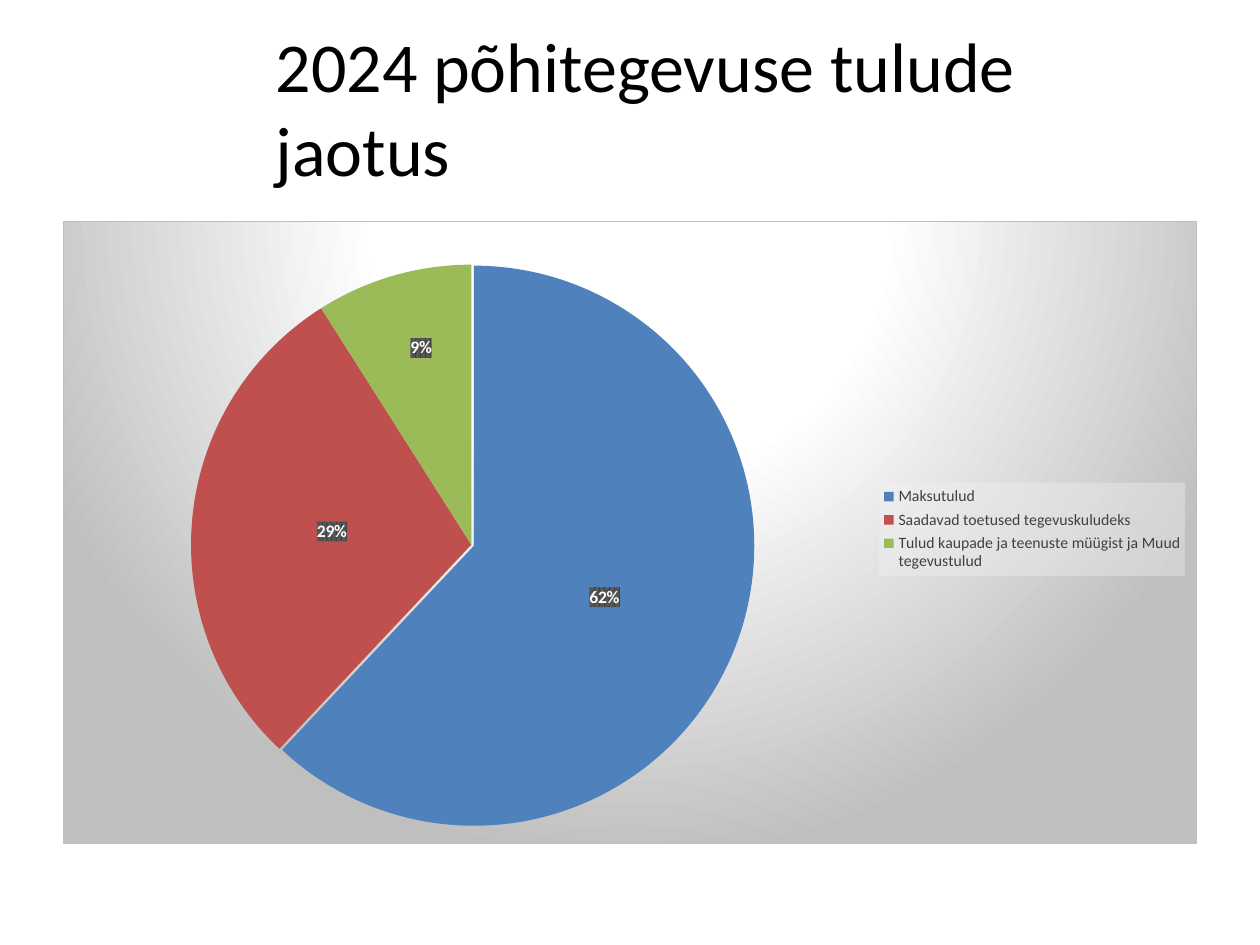
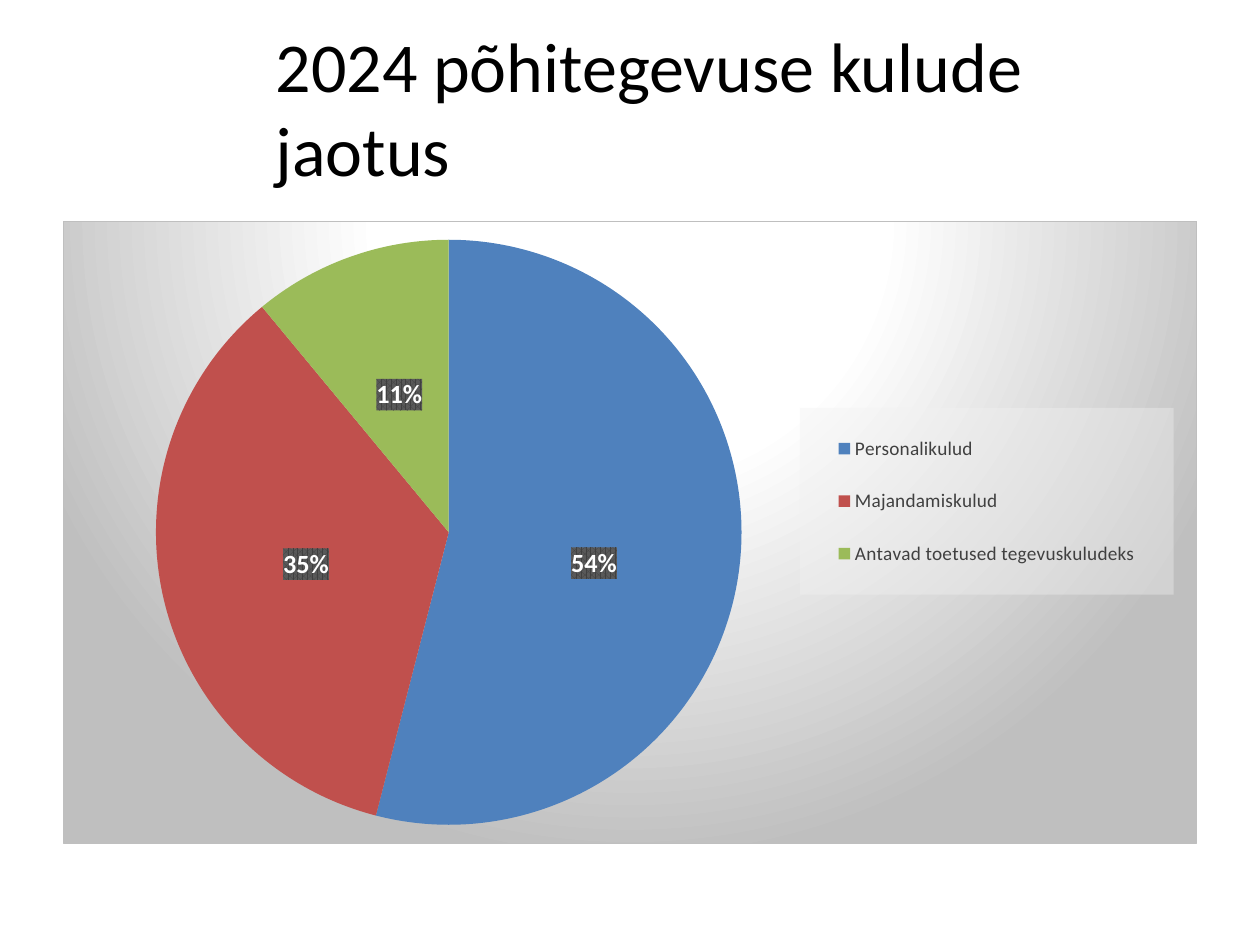
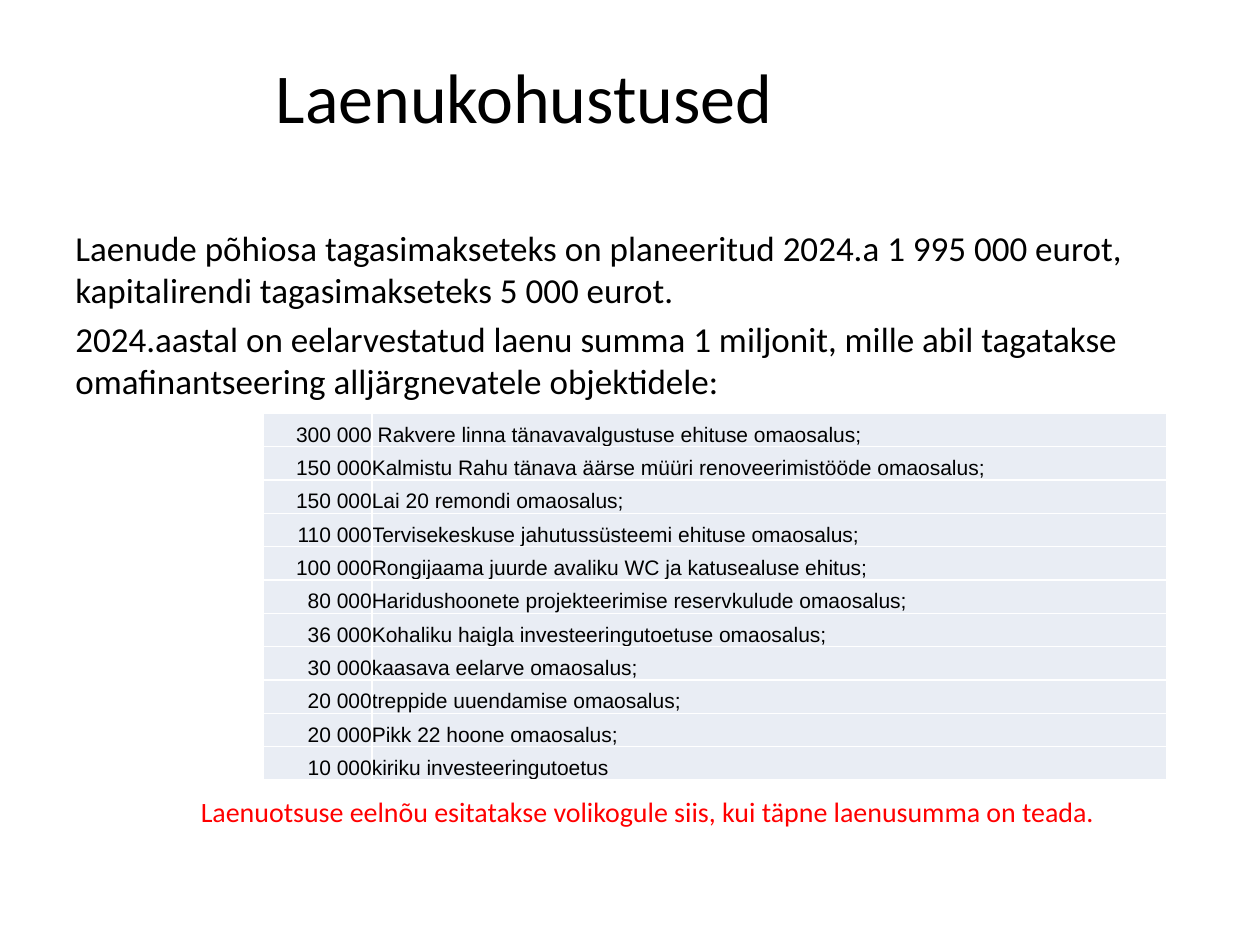
"""Builds the 2024 budget slides: two revenue and cost pies and the loan commitments."""
from copy import deepcopy

from pptx import Presentation
from pptx.chart.data import CategoryChartData
from pptx.dml.color import RGBColor
from pptx.enum.chart import XL_CHART_TYPE, XL_LABEL_POSITION, XL_LEGEND_POSITION
from pptx.enum.text import MSO_ANCHOR, PP_ALIGN
from pptx.oxml import parse_xml
from pptx.oxml.ns import nsdecls, qn
from pptx.util import Pt

COLORS = {
    "text": "000000", "note": "FF0000", "white": "FFFFFF", "gray": "BFBFBF",
    "legend": "404040", "legend_fill": "F2F2F2", "label_dark": "404040",
    "label_light": "595959", "cell": "E9EDF4",
}
SLICES = ["4F81BD", "C0504D", "9BBB59"]
FONT = "Calibri"
TITLE_LEFT, TITLE_WIDTH = 150.5, 533.5
CONTENT = (36, 126, 648)
CHART_HEIGHT = 356.4

PIES = [
    {
        "title": "2024 põhitegevuse tulude jaotus",
        "values": {
            "Maksutulud": 62,
            "Saadavad toetused tegevuskuludeks": 29,
            "Tulud kaupade ja teenuste müügist ja Muud tegevustulud": 9,
        },
        "plot": (0.11, 0.07, 0.5, 0.9), "legend": (0.72, 0.42, 0.27, 0.15),
        "legend_size": 9, "label_size": 10,
        "exploded": 0, "moved": (2, -0.01, -0.1),
    },
    {
        "title": "2024 põhitegevuse kulude jaotus",
        "values": {
            "Personalikulud": 54,
            "Majandamiskulud": 35,
            "Antavad toetused tegevuskuludeks": 11,
        },
        "plot": (0.08, 0.03, 0.52, 0.94), "legend": (0.65, 0.3, 0.33, 0.3),
        "legend_size": 11, "label_size": 15,
        "exploded": None, "moved": (0, 0, 0.02),
    },
]

LOAN_TITLE = "Laenukohustused"
LOAN_TEXT = [
    "Laenude põhiosa tagasimakseteks on planeeritud 2024.a 1 995 000 eurot, "
    "kapitalirendi tagasimakseteks 5 000 eurot.",
    "2024.aastal on eelarvestatud laenu summa 1 miljonit, mille abil tagatakse "
    "omafinantseering alljärgnevatele objektidele:",
]
LOAN_NOTE = "Laenuotsuse eelnõu esitatakse volikogule siis, kui täpne laenusumma on teada."
LOANS = [
    ("300 000", " Rakvere linna tänavavalgustuse ehituse omaosalus;"),
    ("150 000", "Kalmistu Rahu tänava äärse müüri renoveerimistööde omaosalus;"),
    ("150 000", "Lai 20 remondi omaosalus;"),
    ("110 000", "Tervisekeskuse jahutussüsteemi ehituse omaosalus;"),
    ("100 000", "Rongijaama juurde avaliku WC ja katusealuse ehitus;"),
    ("80 000", "Haridushoonete projekteerimise reservkulude omaosalus;"),
    ("36 000", "Kohaliku haigla investeeringutoetuse omaosalus;"),
    ("30 000", "kaasava eelarve omaosalus;"),
    ("20 000", "treppide uuendamise omaosalus;"),
    ("20 000", "Pikk 22 hoone omaosalus;"),
    ("10 000", "kiriku investeeringutoetus"),
]
LOAN_COLUMNS = [(62, PP_ALIGN.RIGHT), (454, PP_ALIGN.JUSTIFY)]
ROW_HEIGHT = 19.05


def style_font(font, size, color="text", bold=False, name=FONT):
    font.name, font.size, font.bold = name, Pt(size), bold
    font.color.rgb = RGBColor.from_string(COLORS[color])


def add_text(page, place, lines, size, color="text", anchor=MSO_ANCHOR.TOP, gap=0):
    frame = page.shapes.add_textbox(*map(Pt, place)).text_frame
    frame.word_wrap, frame.vertical_anchor = True, anchor
    for index, line in enumerate(lines):
        para = frame.add_paragraph() if index else frame.paragraphs[0]
        if index:
            para.space_before = Pt(gap)
        span = para.add_run()
        span.text = line
        style_font(span.font, size, color)


def add_page(deck, title, top=21.6, height=78.5):
    page = deck.slides.add_slide(deck.slide_layouts[6])
    add_text(page, (TITLE_LEFT, top, TITLE_WIDTH, height), [title], 40,
             anchor=MSO_ANCHOR.MIDDLE)
    return page


def solid(color, alpha=100):
    return (f'<a:solidFill><a:srgbClr val="{COLORS[color]}">'
            f'<a:alpha val="{alpha * 1000}"/></a:srgbClr></a:solidFill>')


def set_look(element, content):
    look = parse_xml(f'<c:spPr {nsdecls("c", "a")}>{content}</c:spPr>')
    element.find(qn("c:txPr")).addprevious(look)


def set_layout(element, index, place, inner=False):
    for old in element.findall(qn("c:layout")):
        element.remove(old)
    target = '<c:layoutTarget val="inner"/>' if inner else ""
    modes = '<c:xMode val="edge"/><c:yMode val="edge"/>' if len(place) == 4 else ""
    numbers = "".join(f'<c:{key} val="{value}"/>' for key, value in zip("xywh", place))
    element.insert(index, parse_xml(
        f'<c:layout {nsdecls("c")}><c:manualLayout>{target}{modes}{numbers}'
        "</c:manualLayout></c:layout>"))


def paint_backdrop(chart):
    stops = "".join(
        f'<a:gs pos="{position * 1000}"><a:srgbClr val="{COLORS[color]}"/></a:gs>'
        for position, color in [(0, "white"), (39, "white"), (100, "gray")])
    set_look(chart.element, (
        f'<a:gradFill><a:gsLst>{stops}</a:gsLst><a:path path="circle">'
        '<a:fillToRect l="50000" t="-80000" r="50000" b="180000"/></a:path></a:gradFill>'
        f'<a:ln w="9525">{solid("gray")}</a:ln>'))


def add_labels(series, size, moved):
    labels = series.data_labels
    labels.show_percentage, labels.show_value = True, False
    labels.number_format, labels.number_format_is_linked = "0%", False
    labels.position = XL_LABEL_POSITION.CENTER
    style_font(labels.font, size, "white", True)
    element = labels.element if hasattr(labels, "element") else labels._element
    set_look(element, (
        '<a:pattFill prst="pct75">'
        f'<a:fgClr><a:srgbClr val="{COLORS["label_dark"]}"/></a:fgClr>'
        f'<a:bgClr><a:srgbClr val="{COLORS["label_light"]}"/></a:bgClr></a:pattFill>'))
    index, *shift = moved
    label = parse_xml(f'<c:dLbl {nsdecls("c")}><c:idx val="{index}"/></c:dLbl>')
    for part in element:
        if part.tag != qn("c:showLeaderLines"):
            label.append(deepcopy(part))
    set_layout(label, 1, shift)
    element.insert(0, label)


def add_pie(page, pie):
    data = CategoryChartData()
    data.categories = list(pie["values"])
    data.add_series("Series 1", list(pie["values"].values()))
    chart = page.shapes.add_chart(
        XL_CHART_TYPE.PIE, *map(Pt, (*CONTENT, CHART_HEIGHT)), data).chart
    style_font(chart.font, 10)
    chart.has_title = False
    paint_backdrop(chart)
    set_layout(chart.element.chart.plotArea, 0, pie["plot"], inner=True)

    chart.has_legend = True
    legend = chart.legend
    legend.position, legend.include_in_layout = XL_LEGEND_POSITION.RIGHT, False
    style_font(legend.font, pie["legend_size"], "legend")
    set_look(legend._element, solid("legend_fill", 39))
    set_layout(legend._element, 1, pie["legend"])

    plot = chart.plots[0]
    plot.vary_by_categories = True
    series = plot.series[0]
    for index, color in enumerate(SLICES):
        look = series.points[index].format
        look.fill.solid()
        look.fill.fore_color.rgb = RGBColor.from_string(color)
        look.line.fill.background()
        if index == pie["exploded"]:
            series._element.findall(qn("c:dPt"))[-1].find(qn("c:spPr")).addprevious(
                parse_xml(f'<c:explosion {nsdecls("c")} val="1"/>'))
    add_labels(series, pie["label_size"], pie["moved"])


def fill_cell(cell, text, align):
    cell.margin_left = cell.margin_right = cell.margin_top = cell.margin_bottom = 0
    cell.vertical_anchor = MSO_ANCHOR.BOTTOM
    cell.fill.solid()
    cell.fill.fore_color.rgb = RGBColor.from_string(COLORS["cell"])
    for index, side in enumerate("LRTB"):
        cell._tc.tcPr.insert(index, parse_xml(
            f'<a:ln{side} {nsdecls("a")} w="12700">{solid("white")}</a:ln{side}>'))
    para = cell.text_frame.paragraphs[0]
    para.alignment = align
    span = para.add_run()
    span.text = text
    style_font(span.font, 12, name="Arial")


def add_loans(page):
    width = sum(size for size, _ in LOAN_COLUMNS)
    table = page.shapes.add_table(
        len(LOANS), len(LOAN_COLUMNS),
        *map(Pt, (TITLE_LEFT, 236.2, width, ROW_HEIGHT * len(LOANS)))).table
    table.first_row = table.horz_banding = False
    for column, (size, _) in zip(table.columns, LOAN_COLUMNS):
        column.width = Pt(size)
    for row, loan in zip(table.rows, LOANS):
        row.height = Pt(ROW_HEIGHT)
        for cell, text, (_, align) in zip(row.cells, loan, LOAN_COLUMNS):
            fill_cell(cell, text, align)


def main():
    deck = Presentation()
    deck.slide_width, deck.slide_height = Pt(720), Pt(540)
    for pie in PIES:
        add_pie(add_page(deck, pie["title"]), pie)
    page = add_page(deck, LOAN_TITLE, 20.9, 67.7)
    add_text(page, (*CONTENT, 108), LOAN_TEXT, 20, gap=4)
    add_loans(page)
    add_text(page, (107.7, 450.6, 560, 27), [LOAN_NOTE], 16, "note")
    deck.save("out.pptx")


if __name__ == "__main__":
    main()
